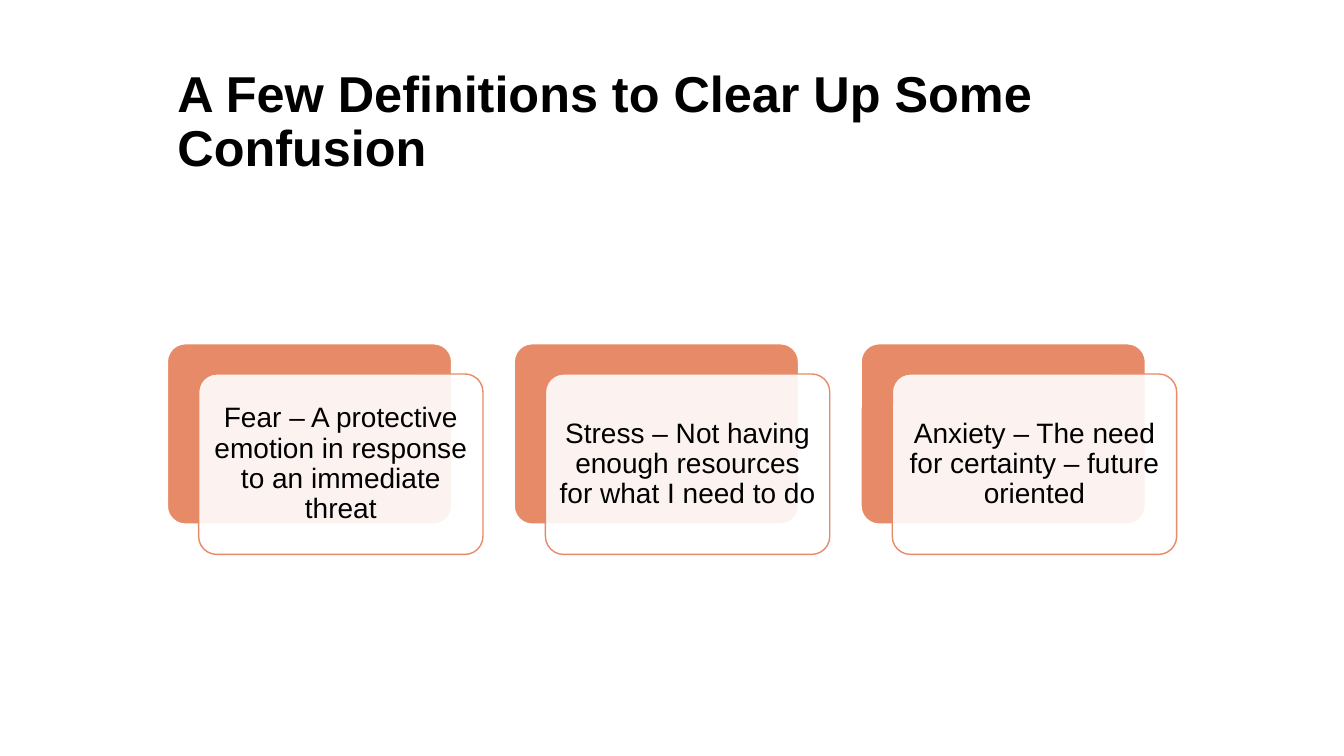
from lxml.etree import SubElement
from pptx import Presentation
from pptx.dml.color import RGBColor
from pptx.enum.shapes import MSO_SHAPE as Shape
from pptx.enum.text import MSO_ANCHOR as Anchor, PP_ALIGN as Align
from pptx.oxml.ns import qn
from pptx.util import Inches, Pt

COLORS = {"coral": "E78A67", "white": "FFFFFF", "black": "000000"}
DEFINITIONS = [
    "Fear – A protective emotion in response to an immediate threat",
    "Stress – Not having enough resources for what I need to do",
    "Anxiety – The need for certainty – future oriented",
]


class SlideBuilder:
    font = "Arial"
    spacing = 0.9

    def __init__(self, s):
        self.s = s

    def color(self, name):
        return RGBColor.from_string(COLORS[name])

    def place(self, sp, left, top, width, height):
        sp.left, sp.top = Inches(left), Inches(top)
        sp.width, sp.height = Inches(width), Inches(height)

    def set_text(self, sp, text, size, align, bold=False):
        tf = sp.text_frame
        tf.text = text
        tf.word_wrap = True
        tf.vertical_anchor = Anchor.MIDDLE
        p = tf.paragraphs[0]
        p.alignment = align
        p.line_spacing = self.spacing
        r = p.runs[0]
        r.font.name = self.font
        r.font.size = Pt(size)
        r.font.bold = bold
        r.font.color.rgb = self.color("black")

    def title(self, text, *box):
        sp = self.s.shapes.title
        self.place(sp, *box)
        self.set_text(sp, text, 36, Align.LEFT, bold=True)

    def panel(self, box, fill, line, opacity=100):
        sp = self.s.shapes.add_shape(Shape.ROUNDED_RECTANGLE, *map(Inches, box))
        sp.adjustments[0] = 0.1
        sp.shadow.inherit = False
        sp.fill.solid()
        sp.fill.fore_color.rgb = self.color(fill)
        sp.line.color.rgb = self.color(line)
        sp.line.width = Pt(1)
        if opacity < 100:
            rgb = sp._element.spPr.find(qn("a:solidFill")).find(qn("a:srgbClr"))
            SubElement(rgb, qn("a:alpha")).set("val", str(opacity * 1000))

    def label(self, text, *box):
        sp = self.s.shapes.add_textbox(*map(Inches, box))
        tf = sp.text_frame
        tf.margin_left = tf.margin_right = Inches(0.08)
        tf.margin_top = tf.margin_bottom = Inches(0.08)
        self.set_text(sp, text, 20, Align.CENTER)

    def card(self, text, left, top):
        width, height, offset, inset = 2.82, 1.79, 0.31, 0.05
        self.panel((left, top, width, height), "coral", "white")
        left, top = left + offset, top + 0.3
        self.panel((left, top, width, height), "white", "coral", opacity=90)
        self.label(text, left + inset, top + inset,
                   width - 2 * inset, height - 2 * inset)


def main():
    prs = Presentation()
    prs.slide_width, prs.slide_height = Inches(13.33), Inches(7.5)
    slide = SlideBuilder(prs.slides.add_slide(prs.slide_layouts[5]))
    slide.title("A Few Definitions to Clear Up Some Confusion",
                1.66, 0.6, 10.02, 1.24)
    for i, text in enumerate(DEFINITIONS):
        slide.card(text, 1.66 + i * 3.44, 3.41)
    prs.save("out.pptx")


if __name__ == "__main__":
    main()
